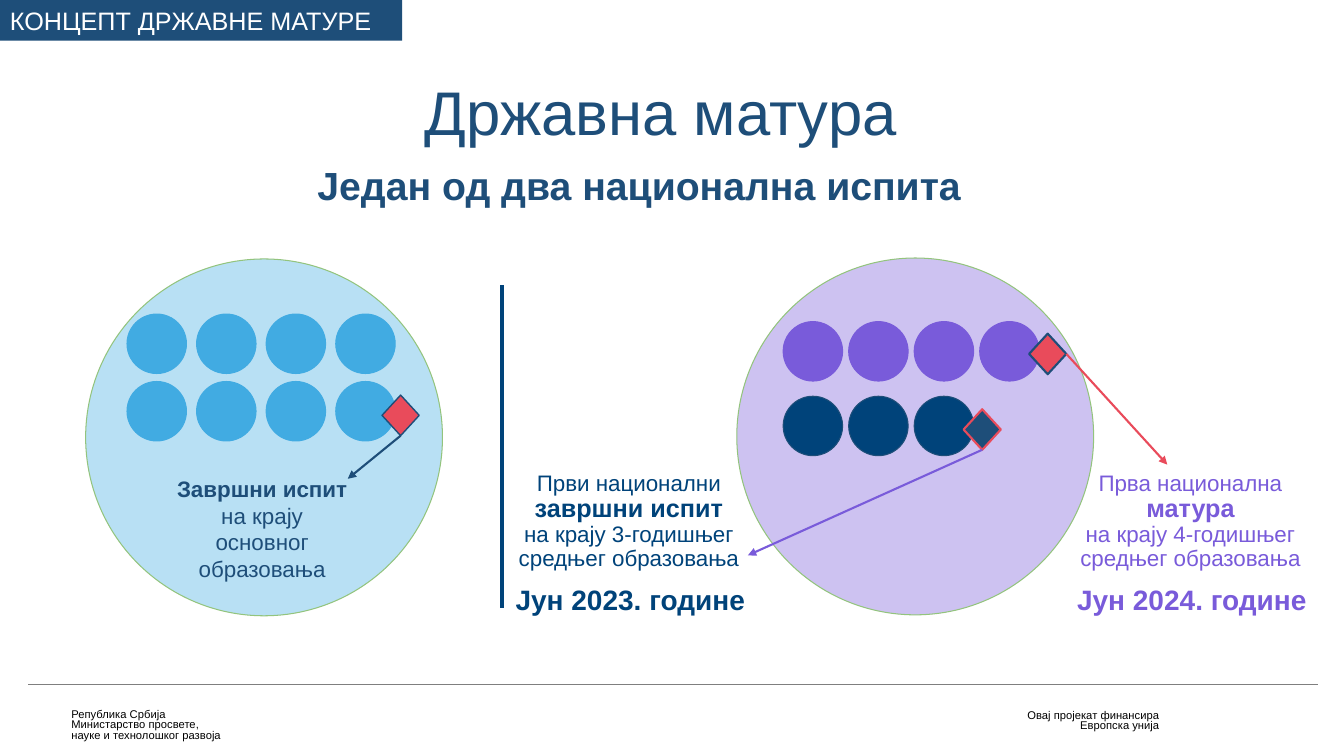
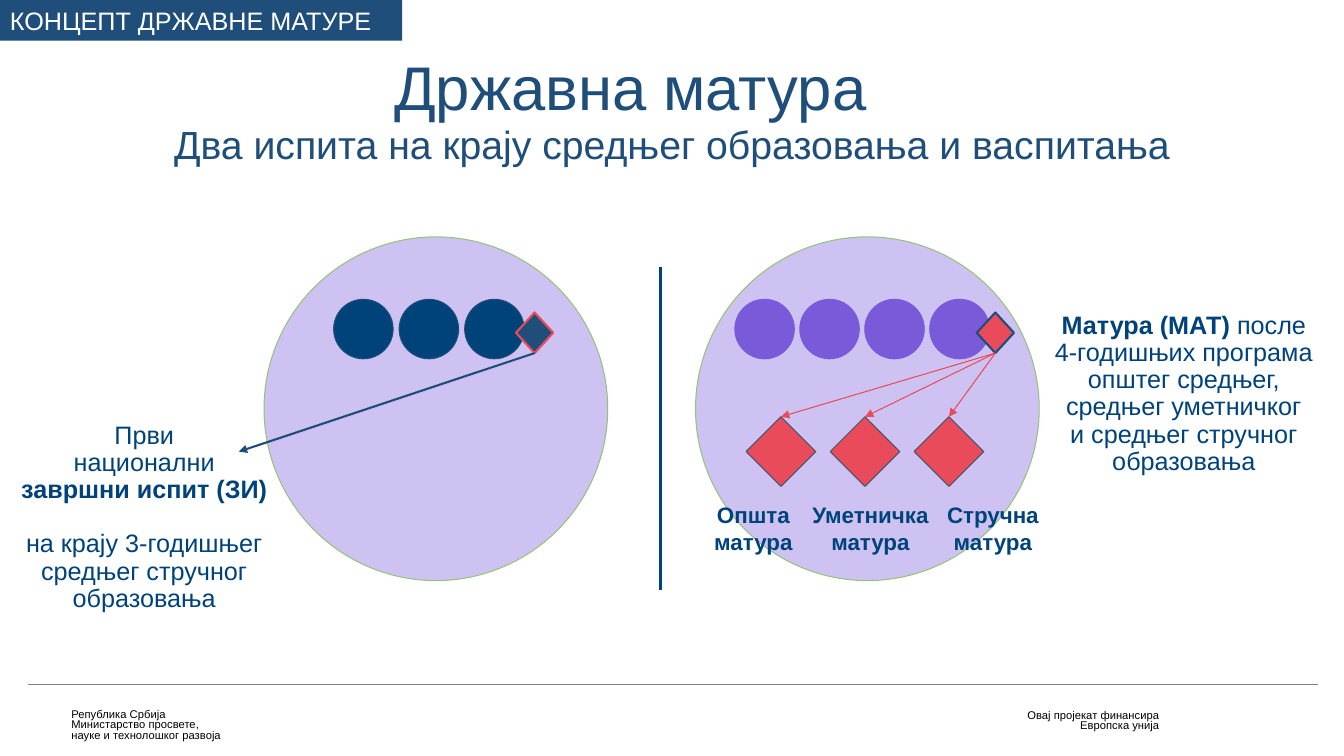
import copy

import lxml.etree
import pptx
import pptx.dml.color
import pptx.enum.shapes
import pptx.enum.text
import pptx.oxml.ns
import pptx.util

Pt = pptx.util.Pt
qn = pptx.oxml.ns.qn
SHAPES = pptx.enum.shapes.MSO_SHAPE
ALIGN = pptx.enum.text.PP_ALIGN
ANCHOR = pptx.enum.text.MSO_ANCHOR

FONT = "Arial"
BLUE = "1E4E79"
NAVY = "00437A"
SKY = "41ABE2"
PURPLE = "795BDA"
RED = "E94B5B"
GREEN = "93C47D"
SLATE = "44546A"
GREY = "7F7F7F"
BLACK = "000000"
WHITE = "FFFFFF"

YEAR = 42.5
YEAR_STEP = 46.8
EXAM = (26.6, 29)
TRACK = 49.7
# Connection sites of a diamond
TOP, BOTTOM, RIGHT = 0, 2, 3


def rgb(hex_colour):
    return pptx.dml.color.RGBColor.from_string(hex_colour)


def write(frame, paragraphs, size, colour, align=ALIGN.CENTER, spacing=1.0,
          inset=3.6, anchor=ANCHOR.TOP, gap=0):
    """Fill a frame; a paragraph is a list of (text, bold[, size]) runs."""
    frame.word_wrap = True
    frame.vertical_anchor = anchor
    frame.margin_left = frame.margin_right = Pt(7.2)
    frame.margin_top = frame.margin_bottom = Pt(inset)
    for index, runs in enumerate(paragraphs):
        paragraph = frame.add_paragraph() if index else frame.paragraphs[0]
        paragraph.alignment = align
        paragraph.line_spacing = spacing
        if index and gap:
            paragraph.space_before = Pt(gap)
        for text, bold, *own_size in runs:
            add_run(paragraph, text, bold, own_size[0] if own_size else size, colour)


def add_run(paragraph, text, bold, size, colour):
    """Add text, turning each newline into a line break of the same size."""
    run = None
    for line in text.split("\n"):
        if run is not None:
            paragraph.add_line_break()
            paragraph._p[-1].append(copy.deepcopy(run._r.rPr))
        if line or run is None:
            run = paragraph.add_run()
            run.text = line
            run.font.name = FONT
            run.font.size = Pt(size)
            run.font.bold = bold
            run.font.color.rgb = rgb(colour)


def add_text(slide, box, paragraphs, size, colour, **style):
    frame = slide.shapes.add_textbox(*map(Pt, box)).text_frame
    write(frame, paragraphs, size, colour, **style)


def add_figure(slide, kind, box, fill, line=None, width=0.75, opacity=None):
    figure = slide.shapes.add_shape(kind, *map(Pt, box))
    figure.shadow.inherit = False
    figure.fill.solid()
    figure.fill.fore_color.rgb = rgb(fill)
    if opacity:
        colour = figure._element.spPr.find(".//" + qn("a:srgbClr"))
        lxml.etree.SubElement(colour, qn("a:alpha"), val=str(opacity * 1000))
    if line:
        figure.line.color.rgb = rgb(line)
        figure.line.width = Pt(width)
    else:
        figure.line.fill.background()
    return figure


def add_line(slide, start, end, colour, width):
    line = slide.shapes.add_connector(
        pptx.enum.shapes.MSO_CONNECTOR.STRAIGHT, *map(Pt, (*start, *end)))
    line.line.color.rgb = rgb(colour)
    line.line.width = Pt(width)
    lxml.etree.SubElement(line._element.spPr, qn("a:effectLst"))
    return line


def add_arrow(slide, exam, site, end, colour, width=1.5):
    """Draw an arrow from a site of an exam diamond to a point."""
    arrow = add_line(slide, (0, 0), end, colour, width)
    arrow.begin_connect(exam, site)
    lxml.etree.SubElement(arrow._element.spPr.get_or_add_ln(),
                          qn("a:tailEnd"), type="triangle")
    return arrow


def add_school(slide, left, top, size, colour):
    add_figure(slide, SHAPES.OVAL, (left, top, size, size), colour, GREEN, opacity=37)


def add_years(slide, left, top, count, fill, line, step=YEAR_STEP):
    """Draw one dot for each school year."""
    for year in range(count):
        add_figure(slide, SHAPES.OVAL, (left + year * step, top, YEAR, YEAR), fill, line)


def add_exam(slide, left, top, fill, line, width=1.5, size=EXAM):
    return add_figure(slide, SHAPES.FLOWCHART_DECISION, (left, top, *size),
                      fill, line, width)


def add_slide(deck, title_left, title_top):
    """Add a slide with the shared footer, title and band."""
    slide = deck.slides.add_slide(deck.slide_layouts[6])
    add_text(slide, (726.5, 504, 108.7, 22.3),
             [[("Овај пројекат финансира", False)], [("Европска унија", False)]],
             8, BLACK, align=ALIGN.RIGHT, spacing=0.8)
    add_text(slide, (43.9, 503.3, 121.7, 30.2),
             [[("Република Србија", False)], [("Министарство просвете,", False)],
              [("науке и технолошког развоја", False)]],
             8, BLACK, align=ALIGN.LEFT, spacing=0.8)
    add_line(slide, (20.2, 489), (941.8, 489), GREY, 1)
    add_text(slide, (title_left, title_top, 385.2, 83.5), [[("Државна матура", False)]],
             44, BLUE, spacing=0.9, anchor=ANCHOR.MIDDLE)
    band = add_figure(slide, SHAPES.RECTANGLE, (0, 0, 287.3, 29), BLUE)
    write(band.text_frame, [[("КОНЦЕПТ ДРЖАВНЕ МАТУРЕ", False)]], 18, WHITE,
          align=ALIGN.LEFT)
    return slide


def add_national_exam(slide, left, date_left, opening, name, ending, date, colour):
    add_text(slide, (date_left, 411.8, 192.2, 36.7), [[(date, True)]], 20, colour,
             spacing=0.9, inset=7.2)
    add_text(slide, (left, 333.4, 197.3, 77.8),
             [[(opening + "\n", False), (name + "\n", True, 18), (ending, False)]],
             16, colour, spacing=0.9)


def add_two_exams(deck):
    slide = add_slide(deck, 279.4, 41)
    add_text(slide, (208.8, 108, 495.4, 54), [[("Један од два национална испита", True)]],
             28, BLUE, spacing=1.1)
    add_line(slide, (358.6, 203.8), (358.6, 434.2), NAVY, 2.25)
    add_national_exam(slide, 350.6, 354.2, "Први национални", "завршни испит",
                      "на крају 3-годишњег средњег образовања",
                      "Јун 2023. године", NAVY)

    add_school(slide, 61.2, 185, 254.9, SKY)
    add_text(slide, (59.8, 331.9, 254.9, 92.2),
             [[("Завршни испит\n", True), ("на крају", False)],
              [("основног\nобразовања", False)]], 16, BLUE, inset=7.2)
    for top in (224.3, 272.5):
        add_years(slide, 90.7, top, 4, SKY, SKY, TRACK)
    primary = add_exam(slide, 272.9, 282.2, RED, BLUE, 1)
    add_arrow(slide, primary, BOTTOM, (248.4, 342), BLUE)

    add_school(slide, 526.3, 184.3, 254.9, PURPLE)
    add_national_exam(slide, 751.7, 755.3, "Прва национална", "матура",
                      "на крају 4-годишњег средњег образовања",
                      "Јун 2024. године", PURPLE)
    add_years(slide, 559.4, 229.7, 4, PURPLE, PURPLE)
    add_years(slide, 559.4, 283, 3, NAVY, BLUE)
    matura = add_exam(slide, 735.1, 238.3, RED, BLUE)
    final = add_exam(slide, 688.3, 292.3, BLUE, RED)
    add_arrow(slide, matura, RIGHT, (833.8, 331.9), RED)
    add_arrow(slide, final, BOTTOM, (534.2, 396.7), PURPLE)


def add_secondary_exams(deck):
    slide = add_slide(deck, 257.8, 23)
    add_text(slide, (27.4, 86.4, 905, 41.8),
             [[("Два испита на крају средњег образовања и васпитања", False)]],
             28, BLUE, spacing=0.9)
    add_line(slide, (471.6, 190.8), (471.6, 421.2), NAVY, 2.25)
    add_text(slide, (2.9, 298.1, 200.2, 123.1),
             [[("Први\nнационални\n", False), ("завршни испит (ЗИ)", True)],
              [("на крају 3-годишњег средњег стручног образовања", False)]],
             18, NAVY, spacing=0.9, gap=19.4)
    add_text(slide, (738.7, 216, 213.8, 132.5),
             [[("Матура (МАТ)", True), (" после", False)],
              [("4-годишњих програма\nопштег средњег, средњег уметничког\n"
                "и средњег стручног образовања", False)]],
             18, NAVY, spacing=0.9, inset=7.2)
    for left in (188.6, 496.8):
        add_school(slide, left, 169.2, 245.5, PURPLE)

    add_years(slide, 238.3, 213.8, 3, NAVY, BLUE)
    final = add_exam(slide, 368.6, 223.2, BLUE, RED)
    add_arrow(slide, final, BOTTOM, (170.6, 322.6), BLUE)

    add_years(slide, 524.9, 213.8, 4, PURPLE, PURPLE, 46.4)
    matura = add_exam(slide, 697.7, 223.2, RED, BLUE)
    kinds = [("Општа", 498.2, 79.9), ("Уметничка", 567.4, 108.7), ("Стручна", 652.3, 113.8)]
    for index, (kind, left, width) in enumerate(kinds):
        branch = add_exam(slide, 533 + index * 60, 297.7, RED, SLATE, 0.75, (49.7, 49.7))
        arrow = add_arrow(slide, matura, BOTTOM, (0, 0), RED, 0.75)
        arrow.end_connect(branch, TOP)
        add_text(slide, (left, 350.6, width, 53.3), [[(kind + "\nматура", True)]],
                 16, NAVY, inset=7.2)


def main():
    deck = pptx.Presentation()
    deck.slide_width, deck.slide_height = Pt(960), Pt(540)
    add_two_exams(deck)
    add_secondary_exams(deck)
    deck.save("out.pptx")


if __name__ == "__main__":
    main()
